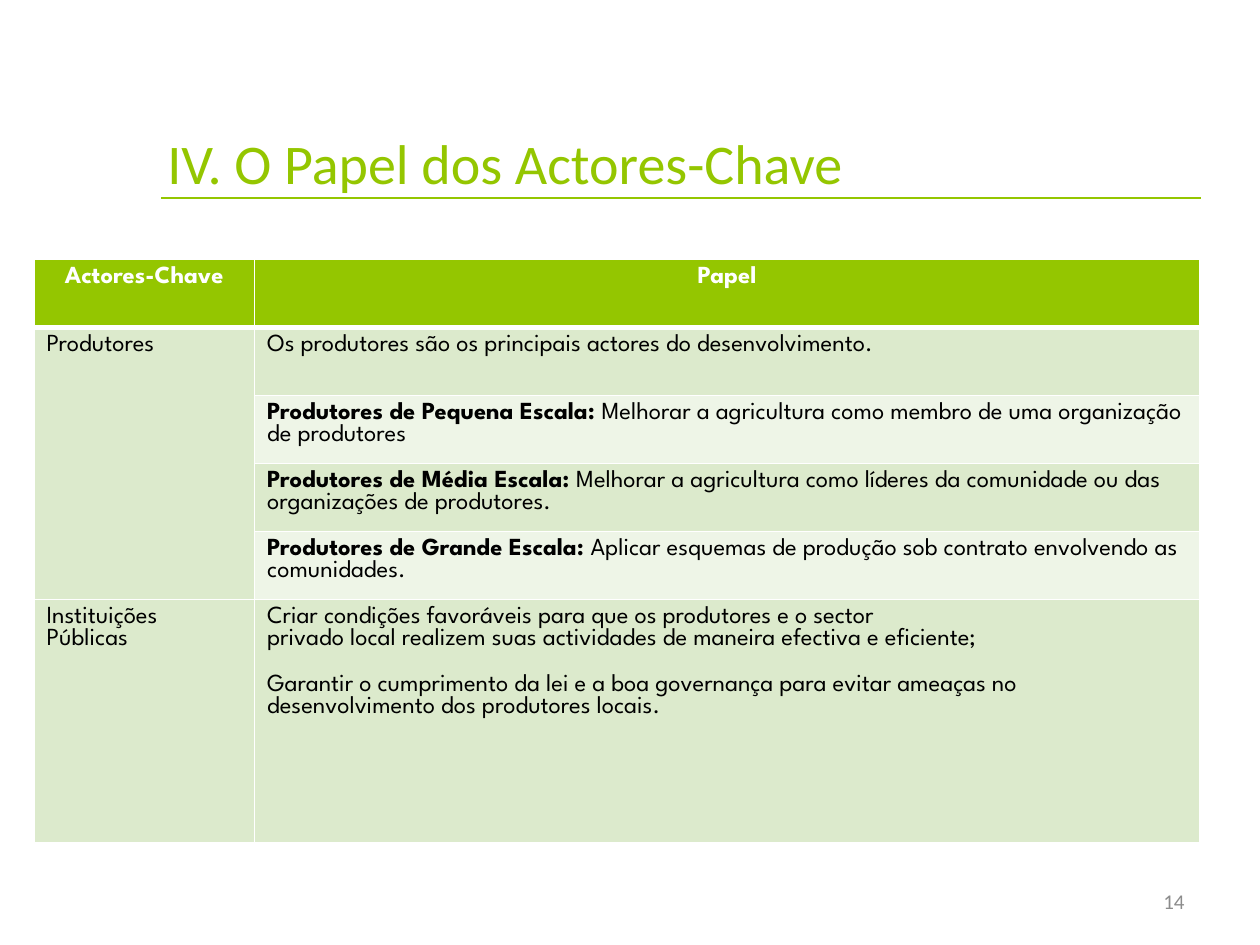
"""Build the slide on the roles of the key actors."""
from lxml.etree import SubElement
from pptx import Presentation
from pptx.dml.color import RGBColor
from pptx.enum.shapes import MSO_CONNECTOR
from pptx.enum.text import MSO_ANCHOR, PP_ALIGN
from pptx.oxml.ns import qn
from pptx.util import Inches, Pt

GREEN = RGBColor(0x94, 0xC6, 0x00)
BAND_DARK = RGBColor(0xDC, 0xEA, 0xCC)
BAND_LIGHT = RGBColor(0xEE, 0xF5, 0xE7)
WHITE = RGBColor(0xFF, 0xFF, 0xFF)
BLACK = RGBColor(0x00, 0x00, 0x00)
GRAY = RGBColor(0x8C, 0x8C, 0x8C)

COLUMN_WIDTHS = [Inches(1.75), Inches(7.5)]
ROW_HEIGHTS = [Inches(0.54)] * 5 + [Inches(1.93)]
ROWS = [
    ("Actores-Chave", [("Papel", "")]),
    ("Produtores", [("", "Os produtores são os principais actores do desenvolvimento.")]),
    ("", [("Produtores de Pequena Escala: ",
           "Melhorar a agricultura como membro de uma organização de produtores")]),
    ("", [("Produtores de Média Escala: ",
           "Melhorar a agricultura como líderes da comunidade ou das organizações de produtores.")]),
    ("", [("Produtores de Grande Escala: ",
           "Aplicar esquemas de produção sob contrato envolvendo as comunidades.")]),
    ("Instituições Públicas", [
        ("", "Criar condições favoráveis para que os produtores e o sector"),
        ("", "privado local realizem suas actividades de maneira efectiva e eficiente;"),
        ("", "Garantir o cumprimento da lei e a boa governança para evitar ameaças "
             "no desenvolvimento dos produtores locais."),
    ]),
]


def add_label(slide, text, bounds, size, color, anchor, alignment):
    box = slide.shapes.add_textbox(*bounds)
    frame = box.text_frame
    frame.word_wrap = True
    frame.vertical_anchor = anchor
    frame.text = text
    para = frame.paragraphs[0]
    para.alignment = alignment
    font = para.runs[0].font
    font.name, font.size = "Calibri", Pt(size)
    font.color.rgb = color


def add_borders(cell, widths):
    properties = cell._tc.get_or_add_tcPr()
    for side, width in zip(("lnL", "lnR", "lnT", "lnB"), widths):
        line = SubElement(properties, qn(f"a:{side}"), w=str(Pt(width)))
        fill = SubElement(line, qn("a:solidFill"))
        SubElement(fill, qn("a:srgbClr"), val=str(WHITE))


deck = Presentation()
deck.slide_width, deck.slide_height = Inches(10), Inches(7.5)
page = deck.slides.add_slide(deck.slide_layouts[6])

rule = page.shapes.add_connector(
    MSO_CONNECTOR.STRAIGHT, Inches(1.28), Inches(1.57), Inches(9.53), Inches(1.57))
rule.line.color.rgb = GREEN
rule.line.width = Pt(1.25)
SubElement(rule._element.spPr, qn("a:effectLst"))

table = page.shapes.add_table(
    len(ROWS), len(COLUMN_WIDTHS), Inches(0.27), Inches(2.06),
    sum(COLUMN_WIDTHS), sum(ROW_HEIGHTS)).table
for column, width in zip(table.columns, COLUMN_WIDTHS):
    column.width = width
for row, height in zip(table.rows, ROW_HEIGHTS):
    row.height = height
table.cell(1, 0).merge(table.cell(4, 0))

for row_index, (actor, roles) in enumerate(ROWS):
    is_header = row_index == 0
    for column_index, lines in enumerate(([("", actor)], roles)):
        cell = table.cell(row_index, column_index)
        add_borders(cell, (1, 1, 3 if row_index == 1 else 1, 3 if is_header else 1))
        cell.fill.solid()
        is_light = column_index == 1 and row_index in (2, 4)
        cell.fill.fore_color.rgb = GREEN if is_header else BAND_LIGHT if is_light else BAND_DARK
        if cell.is_spanned:
            continue
        for line_index, (lead, body) in enumerate(lines):
            frame = cell.text_frame
            para = frame.add_paragraph() if line_index else frame.paragraphs[0]
            para.alignment = PP_ALIGN.CENTER if is_header else PP_ALIGN.LEFT
            if line_index == 2:
                para.space_before = Pt(13)
            for text, bold in ((lead, True), (body, is_header)):
                if text:
                    span = para.add_run()
                    span.text = text
                    span.font.name, span.font.size = "League Spartan", Pt(14)
                    span.font.bold = bold
                    span.font.color.rgb = WHITE if is_header else BLACK

add_label(page, "IV. O Papel dos Actores-Chave",
          (Inches(1.23), Inches(0.68), Inches(9), Inches(0.92)),
          32, GREEN, MSO_ANCHOR.BOTTOM, PP_ALIGN.LEFT)
add_label(page, "14", (Inches(7.17), Inches(6.95), Inches(2.33), Inches(0.4)),
          12, GRAY, MSO_ANCHOR.MIDDLE, PP_ALIGN.RIGHT)

deck.save("out.pptx")
